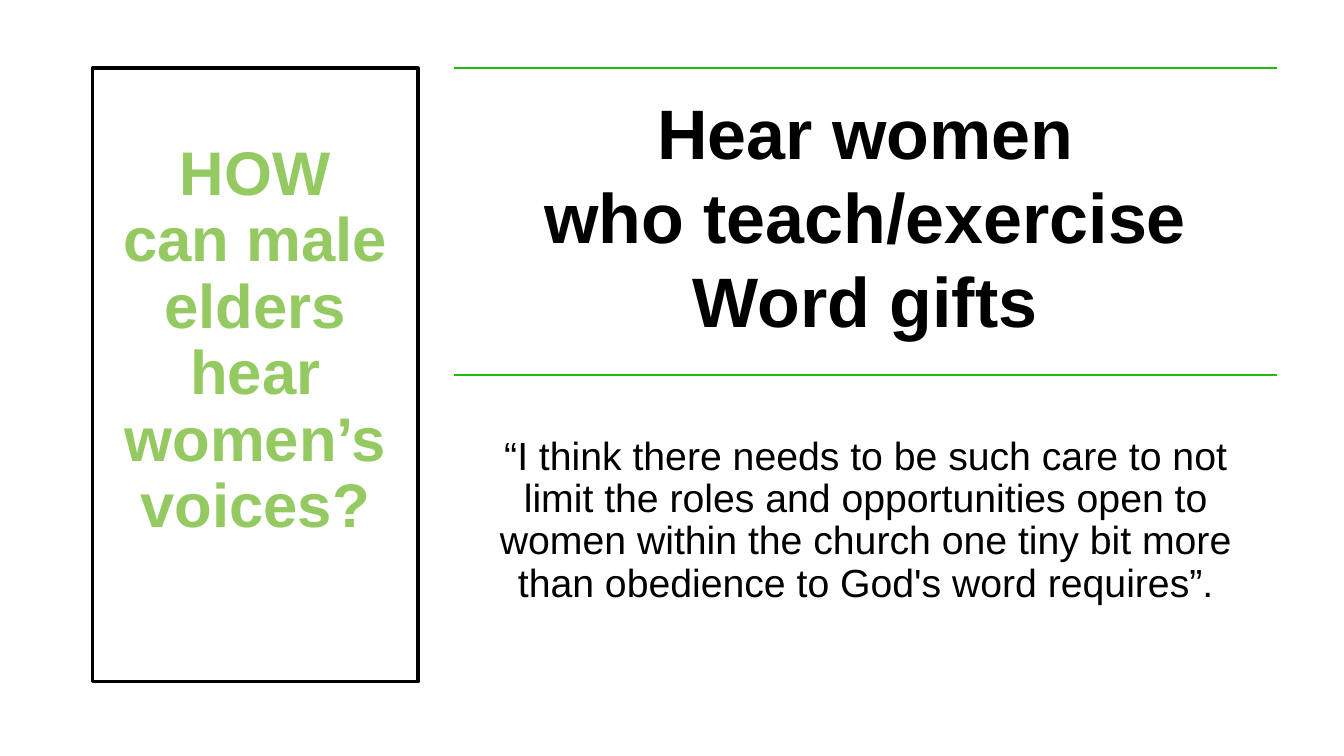
from pptx import Presentation
from pptx import util as u
from pptx.dml.color import RGBColor
from pptx.enum import shapes, text
from pptx.oxml.ns import qn
from lxml import etree

BLACK = RGBColor(0x00, 0x00, 0x00)
RULE_GREEN = RGBColor(0x1F, 0xBC, 0x14)
TITLE_GREEN = RGBColor(0x95, 0xCA, 0x63)
FONT = "Arial"

# Shares of the slide's width and height
TITLE_X, TITLE_W = 0.069, 0.242
MAIN_X, MAIN_W = 0.338, 0.612
TOP, BAND_H = 0.09, 0.406


class Deck:
    def __init__(self):
        self.prs = Presentation()
        self.prs.slide_width, self.prs.slide_height = u.Inches(13.33), u.Inches(7.5)
        self.s = self.prs.slides.add_slide(self.prs.slide_layouts[5])

    def box(self, x, y, w, h):
        sw, sh = self.prs.slide_width, self.prs.slide_height
        return int(x * sw), int(y * sh), int(w * sw), int(h * sh)

    def fill_text(self, sp, paragraphs, size, color, insets, bold=False,
                  spacing=None, anchor=text.MSO_ANCHOR.TOP):
        """Each paragraph is a list of runs with a line break between them."""
        tf = sp.text_frame
        tf.word_wrap = True
        tf.auto_size = text.MSO_AUTO_SIZE.NONE
        tf.vertical_anchor = anchor
        (tf.margin_left, tf.margin_top,
         tf.margin_right, tf.margin_bottom) = map(u.Inches, insets)
        for i, runs in enumerate(paragraphs):
            p = tf.add_paragraph() if i else tf.paragraphs[0]
            p.alignment = text.PP_ALIGN.CENTER
            p.line_spacing = spacing
            for j, words in enumerate(runs):
                if j:
                    p.add_line_break()
                r = p.add_run()
                r.text = words
                r.font.name, r.font.size, r.font.bold = FONT, u.Pt(size), bold
                r.font.color.rgb = color

    def title(self, x, y, w, h, paragraphs, **style):
        sp = self.s.shapes.title
        sp.left, sp.top, sp.width, sp.height = self.box(x, y, w, h)
        sp.line.color.rgb, sp.line.width = BLACK, u.Pt(2.25)
        self.fill_text(sp, paragraphs, **style)

    def textbox(self, x, y, w, h, paragraphs, **style):
        sp = self.s.shapes.add_textbox(*self.box(x, y, w, h))
        self.fill_text(sp, paragraphs, **style)

    def rule(self, x, y, w):
        left, top, width, _ = self.box(x, y, w, 0)
        line = self.s.shapes.add_connector(
            shapes.MSO_CONNECTOR.STRAIGHT, left, top, left + width, top)
        line.line.color.rgb, line.line.width = RULE_GREEN, u.Pt(1)
        etree.SubElement(line._element.spPr, qn("a:effectLst"))


def main():
    deck = Deck()

    # Framed question; the deep bottom inset lifts the text above the middle
    deck.title(TITLE_X, TOP, TITLE_W, 2 * BAND_H,
               [["HOW", "can male elders hear women’s voices?"]],
               size=44, color=TITLE_GREEN, bold=True, spacing=0.9,
               insets=(0.1, 0.05, 0.1, 0.71), anchor=text.MSO_ANCHOR.MIDDLE)

    # Two bands, each under a green rule
    for band in range(2):
        deck.rule(MAIN_X, TOP + band * BAND_H, MAIN_W)

    # Answer
    deck.textbox(MAIN_X, TOP, MAIN_W, BAND_H,
                 [["Hear women"], ["who teach/exercise Word gifts"]],
                 size=50, color=BLACK, bold=True, insets=(0.21,) * 4)

    # Quotation
    deck.textbox(MAIN_X, TOP + BAND_H, MAIN_W, BAND_H,
                 [["“I think there needs to be such care to not limit the roles "
                   "and opportunities open to women within the church one tiny bit "
                   "more than obedience to God's word requires”."]],
                 size=28, color=BLACK, spacing=0.9, insets=(0.1, 0.61, 0.1, 0.1))

    deck.prs.save("out.pptx")


if __name__ == "__main__":
    main()
